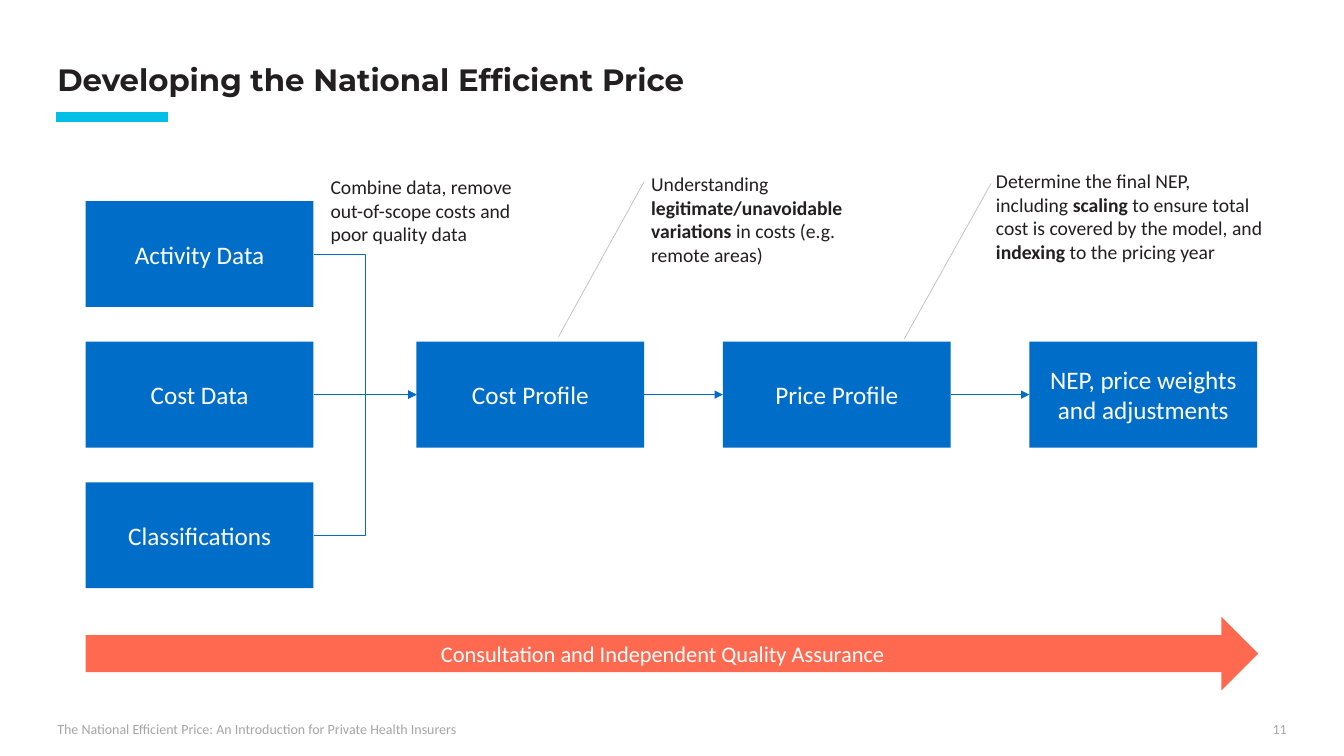
from pptx import Presentation
from pptx.dml.color import RGBColor
from pptx.enum.shapes import MSO_CONNECTOR as Link, MSO_SHAPE as Preset
from pptx.enum.text import MSO_ANCHOR as Anchor, PP_ALIGN as Align
from pptx.oxml.ns import qn
from pptx.util import Inches, Pt
from lxml import etree

BLUE, CYAN, CORAL = "006EC8", "00BEE6", "FF6950"
INK, GREY, PALE, WHITE = "231F20", "A6A6A6", "BFBFBF", "FFFFFF"
BOX_W, BOX_H = 2.26, 1.05
LEFT, MIDDLE_TOP, ROW_STEP = 0.85, 3.39, 1.395

deck = Presentation()
deck.slide_width, deck.slide_height = Inches(13.33), Inches(7.5)
page = deck.slides.add_slide(deck.slide_layouts[6])


def write(shape, runs, size, color, font="Calibri", align=Align.LEFT, anchor=Anchor.TOP):
    """Fill a shape with one paragraph of (text, bold) runs."""
    frame = shape.text_frame
    frame.word_wrap = True
    frame.vertical_anchor = anchor
    para = frame.paragraphs[0]
    para.alignment = align
    para.font.size, para.font.name = Pt(size), font
    para.font.color.rgb = RGBColor.from_string(color)
    for text, bold in runs:
        span = para.add_run()
        span.text = text
        span.font.bold = bold
    return frame


def add_line(kind, start, end, color, width, arrow=False):
    line = page.shapes.add_connector(kind, *(Inches(v) for v in (*start, *end)))
    line.line.color.rgb = RGBColor.from_string(color)
    line.line.width = Pt(width)
    if arrow:
        outline = line.line._get_or_add_ln()
        etree.SubElement(outline, qn("a:tailEnd"), type="triangle")
    etree.SubElement(line._element.spPr, qn("a:effectLst"))
    return line


# Title and footer
add_line(Link.STRAIGHT, (0.56, 1.16), (1.67, 1.16), CYAN, 7)
title = page.shapes.add_textbox(Inches(0.47), Inches(0.47), Inches(12.39), Inches(0.5))
title_frame = write(title, [("Developing the National Efficient Price", True)], 22, INK,
                    font="Montserrat", anchor=Anchor.BOTTOM)
title_frame.margin_bottom = 0
title_frame.paragraphs[0].line_spacing = 0.9

footer = page.shapes.add_textbox(Inches(0.47), Inches(7.1), Inches(8.09), Inches(0.27))
write(footer, [("The National Efficient Price: An Introduction for Private Health Insurers", False)],
      10, GREY, anchor=Anchor.MIDDLE)
number = page.shapes.add_textbox(Inches(9.86), Inches(7.1), Inches(3), Inches(0.27))
write(number, [("11", False)], 10, GREY, align=Align.RIGHT)

# Process boxes and the assurance arrow
blocks = [
    ("Activity Data", LEFT, MIDDLE_TOP - ROW_STEP),
    ("Cost Data", LEFT, MIDDLE_TOP),
    ("Classifications", LEFT, MIDDLE_TOP + ROW_STEP),
    ("Cost Profile", 4.13, MIDDLE_TOP),
    ("Price Profile", 7.17, MIDDLE_TOP),
    ("NEP, price weights and adjustments", 10.21, MIDDLE_TOP),
]
figures = [(Preset.RECTANGLE, label, left, top, BOX_W, BOX_H, BLUE, 18)
           for label, left, top in blocks]
figures.append((Preset.RIGHT_ARROW, "Consultation and Independent Quality Assurance",
                LEFT, 6.12, 11.63, 0.73, CORAL, 16))
shapes = {}
for preset, label, left, top, width, height, color, size in figures:
    shape = page.shapes.add_shape(preset, Inches(left), Inches(top), Inches(width), Inches(height))
    shape.shadow.inherit = False
    shape.fill.solid()
    shape.fill.fore_color.rgb = RGBColor.from_string(color)
    shape.line.fill.background()
    frame = write(shape, [(label, False)], size, WHITE, align=Align.CENTER, anchor=Anchor.MIDDLE)
    if preset == Preset.RIGHT_ARROW:
        frame.margin_left = frame.margin_right = Inches(0.04)
        frame.margin_top = frame.margin_bottom = Inches(0.04)
    shapes[label] = shape

# Flow arrows, from right side to left side
flows = [
    ("Activity Data", "Cost Profile", Link.ELBOW),
    ("Classifications", "Cost Profile", Link.ELBOW),
    ("Cost Data", "Cost Profile", Link.STRAIGHT),
    ("Cost Profile", "Price Profile", Link.STRAIGHT),
    ("Price Profile", "NEP, price weights and adjustments", Link.STRAIGHT),
]
for source, target, kind in flows:
    flow = add_line(kind, (0, 0), (1, 1), BLUE, 0.5, arrow=True)
    flow.begin_connect(shapes[source], 3)
    flow.end_connect(shapes[target], 1)

# Notes above the flow, with their leader lines
add_line(Link.STRAIGHT, (5.54, 3.34), (6.39, 1.8), PALE, 0.5)
add_line(Link.STRAIGHT, (8.97, 3.36), (9.83, 1.82), PALE, 0.5)
remarks = [
    (3.18, 1.69, 2.06, 0.81,
     [("Combine data, remove out-of-scope costs and poor quality data", False)]),
    (6.36, 1.66, 2.4, 1.04,
     [("Understanding ", False), ("legitimate/unavoidable variations ", True),
      ("in costs (e.g. remote areas)", False)]),
    (9.78, 1.63, 2.87, 1.04,
     [("Determine the final NEP, including ", False), ("scaling", True),
      (" to ensure total cost is covered by the model, and ", False),
      ("indexing", True), (" to the pricing year", False)]),
]
for left, top, width, height, runs in remarks:
    remark = page.shapes.add_textbox(Inches(left), Inches(top), Inches(width), Inches(height))
    write(remark, runs, 14, INK)

deck.save("out.pptx")
